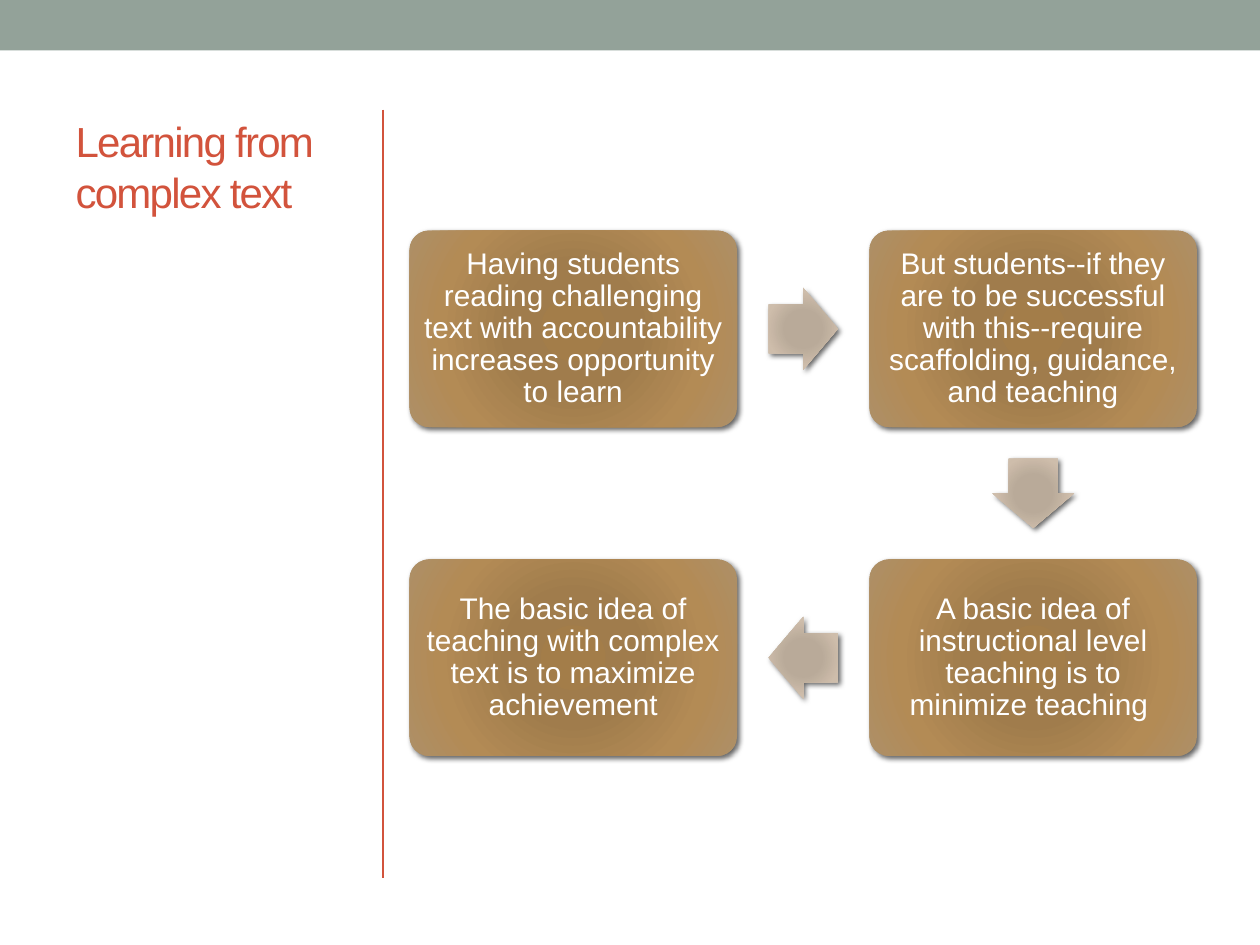
from itertools import pairwise
from lxml.etree import SubElement
from pptx import Presentation
from pptx.dml.color import RGBColor
from pptx.enum.shapes import MSO_CONNECTOR, MSO_SHAPE
from pptx.enum.text import MSO_ANCHOR, MSO_AUTO_SIZE, PP_ALIGN
from pptx.oxml.ns import qn
from pptx.util import Inches, Pt

TITLE = "Learning from complex text"
STEPS = [
    ("Having students reading challenging text with accountability increases opportunity to learn", 0, 0),
    ("But students--if they are to be successful with this--require scaffolding, guidance, and teaching", 1, 0),
    ("A basic idea of instructional level teaching is to minimize teaching ", 1, 1),
    ("The basic idea of teaching with complex text is to maximize achievement", 0, 1),
]
TURNS = {(1, 0): 0, (0, 1): 90, (-1, 0): 180}
COLORS = {"band": "93A299", "accent": "D2533C", "text": "FFFFFF", "shade": "000000"}
BROWN = [(0, "A37D49"), (34, "A07C4C"), (70, "B38B55"), (100, "AD8F67")]
TAN = [(0, "BAAA98"), (34, "B9AA99"), (70, "CEBDAB"), (100, "D3C6B8")]
LEFT, TOP, STEP_X, STEP_Y = 3.25, 1.83, 3.65, 2.61
BOX_W, BOX_H, ARROW_W, ARROW_H = 2.6, 1.56, 0.55, 0.65


def write(shape, text, size, color, align, anchor, pad=(0.1, 0.05), lead=1.0, track=0):
    """Put formatted text in a shape."""
    frame = shape.text_frame
    frame.word_wrap = True
    frame.auto_size = MSO_AUTO_SIZE.NONE
    frame.vertical_anchor = anchor
    frame.margin_left = frame.margin_right = Inches(pad[0])
    frame.margin_top = frame.margin_bottom = Inches(pad[1])
    para = frame.paragraphs[0]
    para.alignment, para.line_spacing = align, lead
    run = para.add_run()
    run.text = text
    run.font.name, run.font.size = "Arial", Pt(size)
    run.font.color.rgb = RGBColor.from_string(COLORS[color])
    if track:
        run._r.get_or_add_rPr().set("spc", str(track * 100))


def add(slide, kind, x, y, w, h):
    """Add a plain shape without line or shadow."""
    shape = slide.shapes.add_shape(kind, Inches(x), Inches(y), Inches(w), Inches(h))
    shape.shadow.inherit = False
    shape.line.fill.background()
    return shape


def tint(parent, color):
    """Append a colour element."""
    return SubElement(parent, qn("a:srgbClr"), val=color)


def shade(shape, stops):
    """Give a shape a radial gradient and a soft shadow."""
    shape.fill.background()
    props = shape._element.spPr
    blank = props.find(qn("a:noFill"))
    grad = props.makeelement(qn("a:gradFill"), {"rotWithShape": "1"})
    props.replace(blank, grad)
    items = SubElement(grad, qn("a:gsLst"))
    for pos, color in stops:
        tint(SubElement(items, qn("a:gs"), pos=str(pos * 1000)), color)
    route = SubElement(grad, qn("a:path"), path="circle")
    SubElement(route, qn("a:fillToRect"), {side: "100000" for side in "ltrb"})
    cast = SubElement(props.find(qn("a:effectLst")), qn("a:outerShdw"), blurRad=str(Pt(3)),
                      dist=str(Pt(2)), dir="2700000", rotWithShape="0")
    SubElement(tint(cast, COLORS["shade"]), qn("a:alpha"), val="60000")


def main():
    """Build the slide."""
    deck = Presentation()
    deck.slide_width, deck.slide_height = Inches(10), Inches(7.5)
    slide = deck.slides.add_slide(deck.slide_layouts[5])

    band = add(slide, MSO_SHAPE.RECTANGLE, 0, 0, 10, 0.4)
    band.fill.solid()
    band.fill.fore_color.rgb = RGBColor.from_string(COLORS["band"])

    rule = slide.shapes.add_connector(
        MSO_CONNECTOR.STRAIGHT, Inches(3.04), Inches(0.87), Inches(3.04), Inches(6.97))
    rule.line.width = Pt(1.5)
    rule.line.color.rgb = RGBColor.from_string(COLORS["accent"])
    SubElement(rule._element.spPr, qn("a:effectLst"))

    title = slide.shapes.title
    title.left, title.top = Inches(0.5), Inches(0.87)
    title.width, title.height = Inches(2.34), Inches(1.38)
    write(title, TITLE, 24, "accent", PP_ALIGN.LEFT, MSO_ANCHOR.TOP, track=-1)

    for text, col, row in STEPS:
        box = add(slide, MSO_SHAPE.ROUNDED_RECTANGLE,
                  LEFT + col * STEP_X, TOP + row * STEP_Y, BOX_W, BOX_H)
        box.adjustments[0] = 0.1
        shade(box, BROWN)
        write(box, text, 17, "text", PP_ALIGN.CENTER, MSO_ANCHOR.MIDDLE, pad=(0.06, 0.06), lead=0.9)

    for (_, col, row), (_, col2, row2) in pairwise(STEPS):
        x = LEFT + (col + col2) / 2 * STEP_X + (BOX_W - ARROW_W) / 2
        y = TOP + (row + row2) / 2 * STEP_Y + (BOX_H - ARROW_H) / 2
        arrow = add(slide, MSO_SHAPE.RIGHT_ARROW, x, y, ARROW_W, ARROW_H)
        arrow.adjustments[0], arrow.adjustments[1] = 0.6, 0.5
        arrow.rotation = TURNS[col2 - col, row2 - row]
        shade(arrow, TAN)

    deck.save("out.pptx")


if __name__ == "__main__":
    main()
